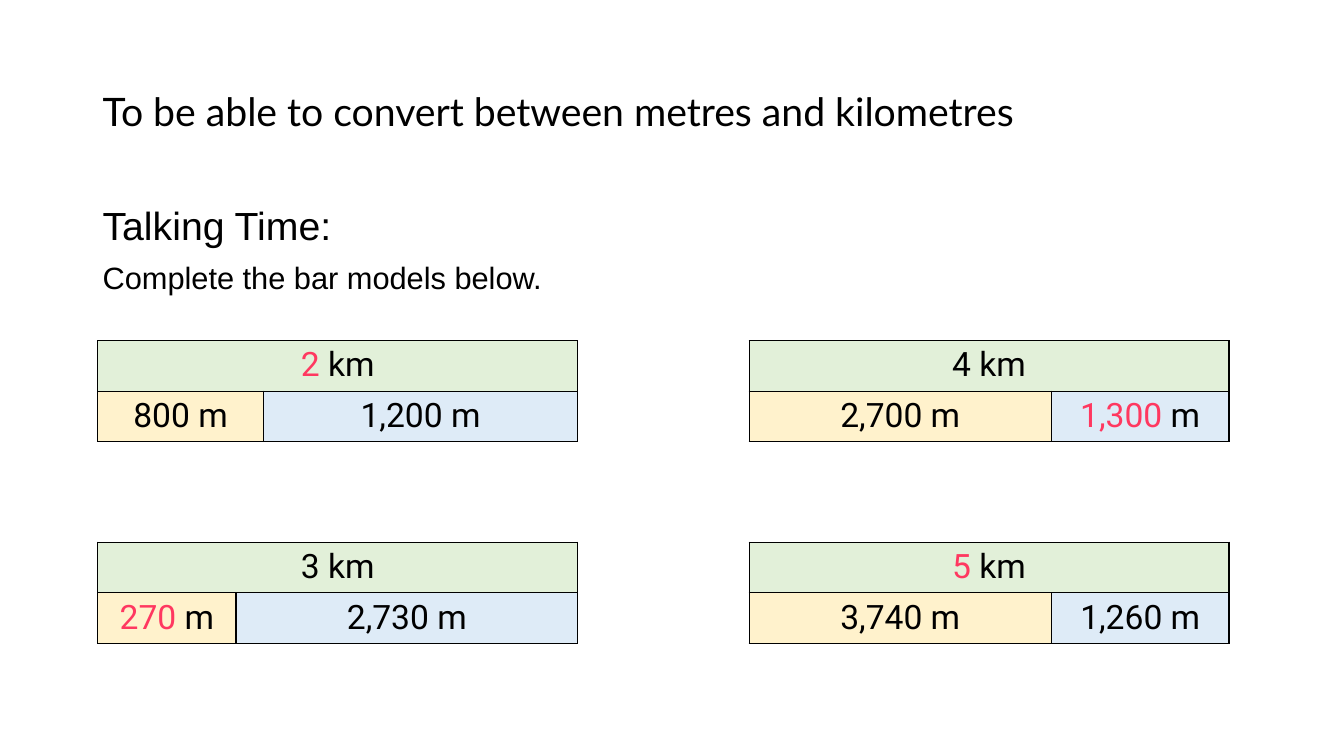
from lxml.etree import SubElement
from pptx import Presentation
from pptx.dml.color import RGBColor
from pptx.enum.text import MSO_ANCHOR, PP_ALIGN
from pptx.oxml.ns import qn
from pptx.util import Inches, Pt

# Content: each label is (answer in pink, text in black)
TITLE = [("To be able to convert between metres and kilometres", "Lato", 28)]
TASK = [("Talking Time:", "Arial", 28),
        ("Complete the bar models below.", "Arial", 22)]
# Whole, left part, right part, left part's share of the bar
BAR_MODELS = [
    [(("2", " km"), ("", "800 m"), ("", "1,200 m"), 0.345),
     (("", "4 km"), ("", "2,700 m"), ("1,300", " m"), 0.63)],
    [(("", "3 km"), ("270", " m"), ("", "2,730 m"), 0.288),
     (("5", " km"), ("", "3,740 m"), ("", "1,260 m"), 0.63)],
]
COLOURS = {"text": "000000", "answer": "FF3860", "whole": "E2F0D9",
           "left": "FFF2CC", "right": "DEEBF7"}

# Grid of bar models, in inches
GRID_LEFT, GRID_TOP = 0.97, 3.38
COLUMN_STEP, ROW_STEP = 6.46, 2
BAR_WIDTH, BAR_HEIGHT = 4.76, 0.49


def colour(name):
    return RGBColor.from_string(COLOURS[name])


def add_lines(slide, lines, left, top, width, height, anchor):
    frame = slide.shapes.add_textbox(
        Inches(left), Inches(top), Inches(width), Inches(height)).text_frame
    frame.word_wrap = True
    frame.vertical_anchor = anchor
    frame.text = "\n".join(words for words, _, _ in lines)
    for index, (_, font_name, size) in enumerate(lines):
        paragraph = frame.paragraphs[index]
        paragraph.line_spacing = 0.9
        paragraph.space_before = Pt(10 if index else 0)
        font = paragraph.runs[0].font
        font.name, font.size = font_name, Pt(size)
        font.color.rgb = colour("text")


def add_borders(cell):
    properties = cell._tc.get_or_add_tcPr()
    for position, side in enumerate(("a:lnL", "a:lnR", "a:lnT", "a:lnB")):
        border = SubElement(properties, qn(side), w=str(Pt(1)))
        fill = SubElement(border, qn("a:solidFill"))
        SubElement(fill, qn("a:srgbClr"), val=COLOURS["text"])
        properties.insert(position, border)


def fill_cell(cell, label, part):
    cell.fill.solid()
    cell.fill.fore_color.rgb = colour(part)
    paragraph = cell.text_frame.paragraphs[0]
    paragraph.alignment = PP_ALIGN.CENTER
    for words, role in zip(label, ("answer", "text")):
        if words:
            run = paragraph.add_run()
            run.text = words
            run.font.name, run.font.size = "Roboto", Pt(24)
            run.font.color.rgb = colour(role)


def add_bar_model(slide, left, top, model):
    whole, left_part, right_part, share = model
    table = slide.shapes.add_table(
        2, 2, Inches(left), Inches(top),
        Inches(BAR_WIDTH), Inches(2 * BAR_HEIGHT)).table
    table.first_row = table.horz_banding = False
    for column, part_share in zip(table.columns, (share, 1 - share)):
        column.width = Inches(BAR_WIDTH * part_share)
    table.cell(0, 0).merge(table.cell(0, 1))
    fill_cell(table.cell(0, 0), whole, "whole")
    fill_cell(table.cell(1, 0), left_part, "left")
    fill_cell(table.cell(1, 1), right_part, "right")
    for cell in table.iter_cells():
        add_borders(cell)


def main():
    deck = Presentation()
    deck.slide_width, deck.slide_height = Inches(13.33), Inches(7.5)
    slide = deck.slides.add_slide(deck.slide_layouts[6])

    # Heading and task
    add_lines(slide, TITLE, 0.92, 0.4, 9.6, 1.45, MSO_ANCHOR.MIDDLE)
    add_lines(slide, TASK, 0.92, 2, 11.5, 1.2, MSO_ANCHOR.TOP)

    # Bar models
    for row, models in enumerate(BAR_MODELS):
        for column, model in enumerate(models):
            add_bar_model(slide, GRID_LEFT + column * COLUMN_STEP,
                          GRID_TOP + row * ROW_STEP, model)

    deck.save("out.pptx")


if __name__ == "__main__":
    main()
